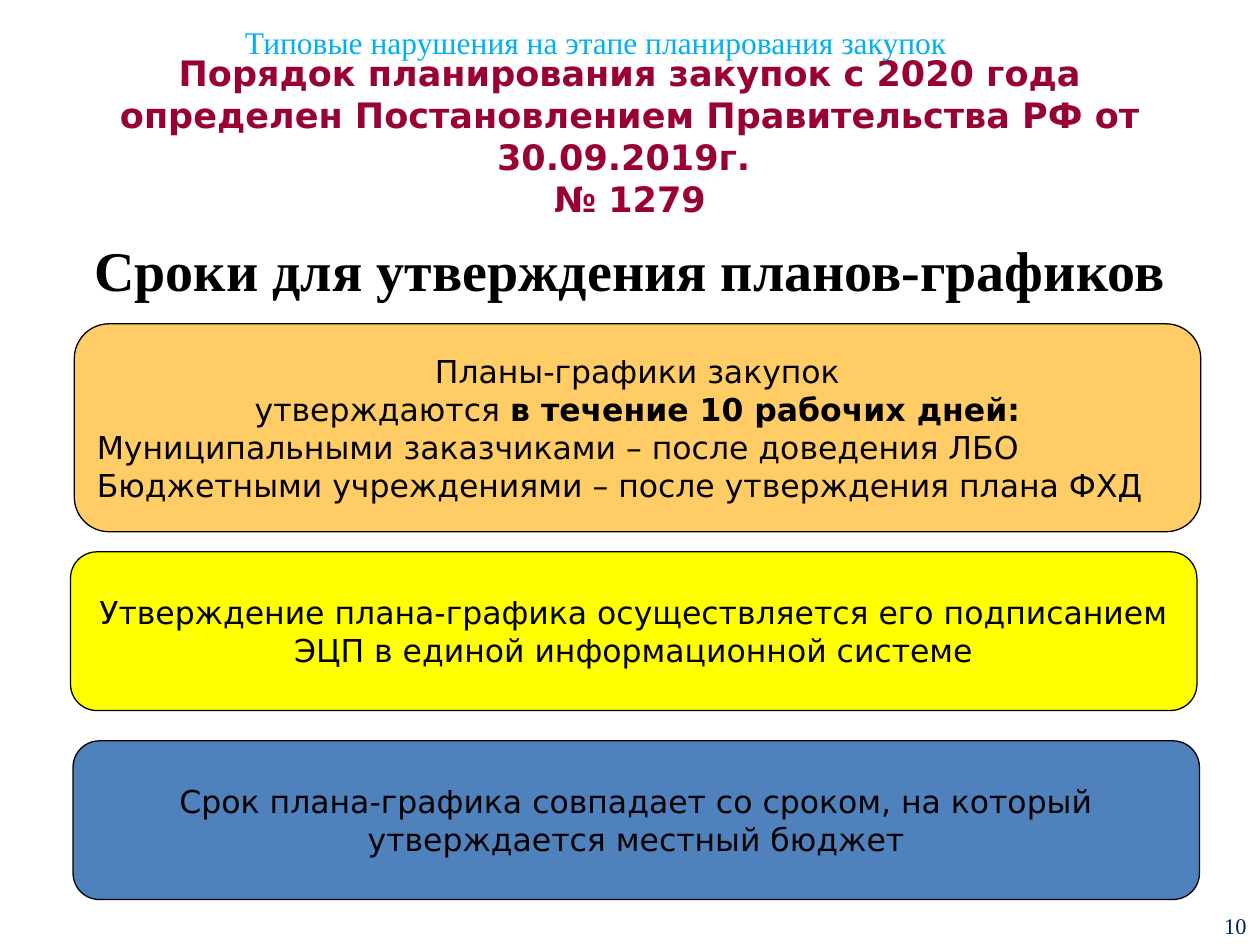
from pptx import Presentation
from pptx import util as u
from pptx.dml.color import RGBColor
from pptx.enum import shapes, text
from pptx.oxml.ns import qn

SANS, SERIF = "DejaVu Sans", "Times New Roman"
CENTER, LEFT = text.PP_ALIGN.CENTER, text.PP_ALIGN.LEFT

TITLE = [
    "Порядок планирования закупок с 2020 года определен "
    "Постановлением Правительства РФ от 30.09.2019г. ",
    "№ 1279",
]
HEADING = "Сроки для утверждения планов-графиков"
SECTION = "Типовые нарушения на этапе планирования закупок "
PAGE_NUMBER = "10"

PANEL_WIDTH = 8.94
PANELS = [
    (0.59, 2.57, 1.65, "FFCC66", [
        (CENTER, [("Планы-графики закупок", False)]),
        (CENTER, [("утверждаются ", False), ("в течение 10 рабочих дней:", True)]),
        (LEFT, [("Муниципальными заказчиками – после доведения ЛБО", False)]),
        (LEFT, [("Бюджетными учреждениями – после утверждения плана ФХД", False)]),
    ]),
    (0.56, 4.38, 1.26, "FFFF00", [
        (CENTER, [("Утверждение плана-графика осуществляется его подписанием "
                   "ЭЦП в единой информационной системе", False)]),
    ]),
    (0.58, 5.88, 1.26, "4F81BD", [
        (CENTER, [("Срок плана-графика совпадает со сроком, на который "
                   "утверждается местный бюджет", False)]),
    ]),
]


def color(code):
    return RGBColor.from_string(code)


def place(shape, left, top, width, height):
    shape.left, shape.top = u.Inches(left), u.Inches(top)
    shape.width, shape.height = u.Inches(width), u.Inches(height)


def add_span(para, words, size, font, code, bold=False):
    span = para.add_run()
    span.text = words
    span.font.size = u.Pt(size)
    span.font.name = font
    span.font.bold = bold
    span.font.color.rgb = color(code)


def setup_frame(shape, anchor):
    frame = shape.text_frame
    frame.word_wrap = True
    frame.auto_size = text.MSO_AUTO_SIZE.NONE
    frame.vertical_anchor = anchor
    para = frame.paragraphs[0]
    para.alignment = CENTER
    return frame, para


def add_title(page):
    title = page.shapes.title
    place(title, 0.5, 0.52, 9, 1.06)
    frame, para = setup_frame(title, text.MSO_ANCHOR.MIDDLE)
    frame.margin_left = frame.margin_right = frame.margin_bottom = 0
    frame.margin_top = u.Inches(0.05)
    para.space_before = u.Pt(3.8)
    for index, line in enumerate(TITLE):
        if index:
            para.add_line_break()
        add_span(para, line, 20, SANS, "990033", True)


def add_heading(page):
    body = page.placeholders[1]
    place(body, 0.5, 1.47, 9, 4.95)
    frame, para = setup_frame(body, text.MSO_ANCHOR.TOP)
    frame.margin_top = u.Inches(0.4)
    para.space_before = u.Pt(0)
    properties = para._p.get_or_add_pPr()
    properties.set("marL", "0")
    properties.set("indent", "0")
    properties.append(properties.makeelement(qn("a:buNone"), {}))
    add_span(para, HEADING, 32, SERIF, "000000", True)


def add_panel(page, left, top, height, fill, lines):
    panel = page.shapes.add_shape(
        shapes.MSO_SHAPE.ROUNDED_RECTANGLE,
        *map(u.Inches, (left, top, PANEL_WIDTH, height)))
    panel.shadow.inherit = False
    panel.fill.solid()
    panel.fill.fore_color.rgb = color(fill)
    panel.line.color.rgb = color("000000")
    panel.line.width = u.Pt(0.75)
    frame, para = setup_frame(panel, text.MSO_ANCHOR.MIDDLE)
    for index, (alignment, spans) in enumerate(lines):
        if index:
            para = frame.add_paragraph()
        para.alignment = alignment
        for words, bold in spans:
            add_span(para, words, 18, SANS, "000000", bold)


def add_label(page, bounds, words, size, code):
    box = page.shapes.add_textbox(*map(u.Inches, bounds))
    frame, para = setup_frame(box, text.MSO_ANCHOR.TOP)
    add_span(para, words, size, SERIF, code)
    return para


def main():
    deck = Presentation()
    deck.slide_width, deck.slide_height = u.Inches(10), u.Inches(7.5)
    page = deck.slides.add_slide(deck.slide_layouts[1])
    add_title(page)
    add_heading(page)
    for panel in PANELS:
        add_panel(page, *panel)
    add_label(page, (1.02, 0.13, 7.48, 0.4), SECTION, 18, "00B0F0")
    number = add_label(page, (9.61, 7.19, 0.39, 0.31), PAGE_NUMBER, 12.8, "002060")
    number.space_before = u.Pt(2.5)
    deck.save("out.pptx")


if __name__ == "__main__":
    main()
